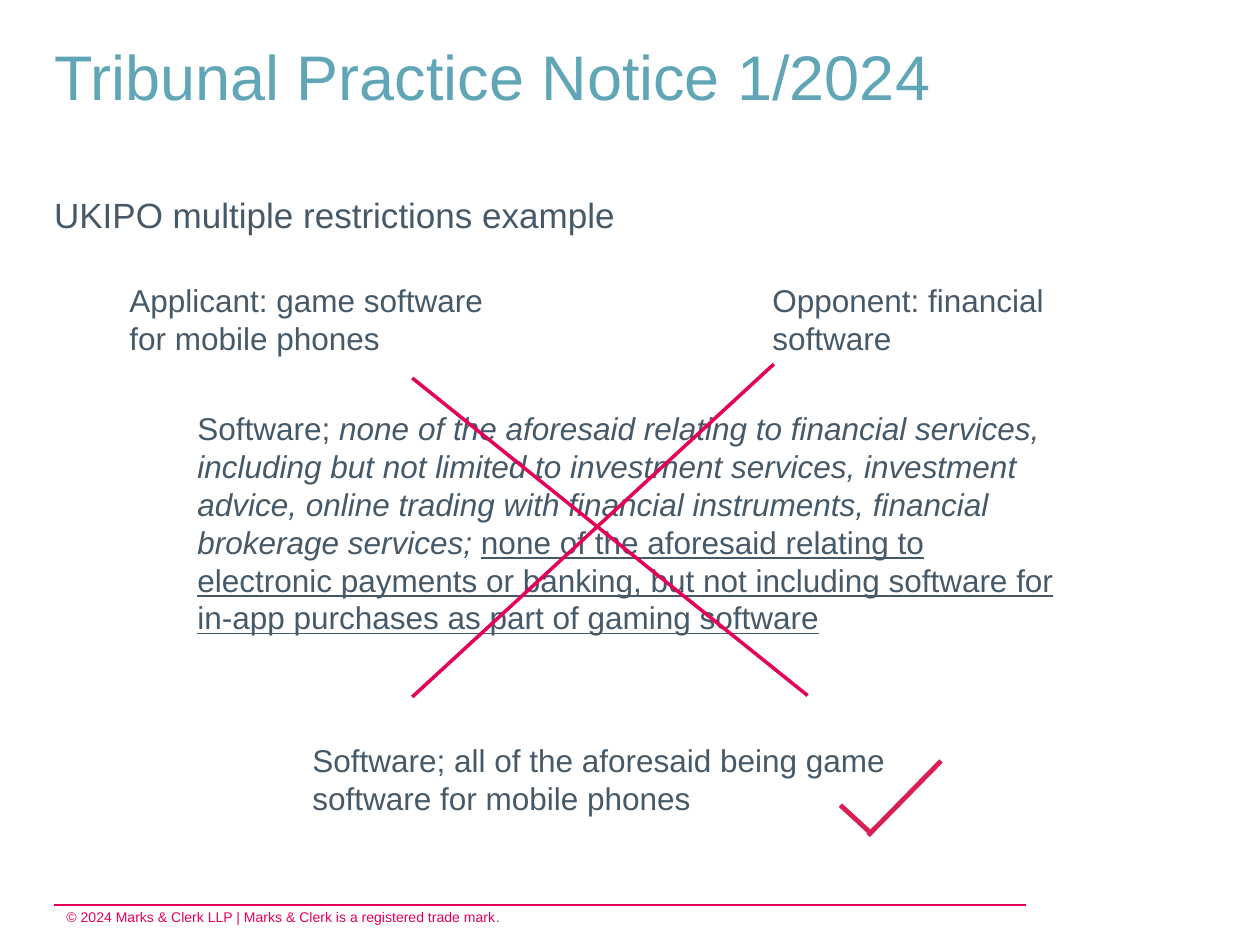
"""Build the Tribunal Practice Notice slide."""
from dataclasses import dataclass, field

from lxml.etree import SubElement
from pptx import Presentation
from pptx.dml.color import RGBColor as RGB
from pptx.enum.shapes import MSO_CONNECTOR as Conn
from pptx.enum.text import MSO_ANCHOR as Anchor, PP_ALIGN as Align
from pptx.oxml.ns import qn
from pptx.slide import Slide
from pptx.util import Cm, Pt

COLOURS = {"title": "61A6B6", "text": "465969", "brand": "E40058", "tick": "D91F53"}
MARGIN = 1.09
PAIR_TOP = 5.54


@dataclass
class Run:
    text: str
    colour: str = "text"
    fmt: dict = field(default_factory=dict)


@dataclass
class Block:
    left: float
    top: float
    width: float
    height: float
    runs: list[Run]
    size: int = 18
    padded: bool = True
    spacing: float = 1.0


@dataclass
class Line:
    x1: float
    y1: float
    x2: float
    y2: float
    weight: float
    colour: str = "brand"


BLOCKS = [
    Block(MARGIN, 18.19, 10.62, 0.61, [
        Run("© 2024 Marks & Clerk LLP | Marks & Clerk is a registered trade mark", "brand"),
        Run("."),
    ], size=8),
    Block(MARGIN, 3.99, 23.14, 13.11, [Run("UKIPO multiple restrictions example")],
          size=20, padded=False, spacing=0.9),
    Block(MARGIN, 0.94, 24.31, 1.68, [Run("Tribunal Practice Notice 1/2024", "title")],
          size=36, padded=False, spacing=0.9),
    Block(2.36, PAIR_TOP, 8.46, 1.8, [Run("Applicant: game software for mobile phones")]),
    Block(15.32, PAIR_TOP, 8.46, 1.8, [Run("Opponent: financial software")]),
    Block(3.73, 8.13, 17.88, 4.88, [
        Run("Software; "),
        Run("none of the aforesaid relating to financial services, including but not "
            "limited to investment services, investment advice, online trading with "
            "financial instruments, financial brokerage services; ", fmt={"italic": True}),
        Run("none of the aforesaid relating to electronic payments or banking, but not "
            "including software for in-app purchases as part of gaming software",
            fmt={"underline": True}),
    ]),
    Block(6.05, 14.81, 13.28, 1.8, [
        Run("Software; all of the aforesaid being game software for mobile phones"),
    ]),
]

LINES = [
    Line(MARGIN, 18.24, 20.68, 18.24, 1.15),
    Line(16.94, 16.23, 17.55, 16.79, 2.75, "tick"),
    Line(17.5, 16.84, 18.97, 15.34, 2.75, "tick"),
    Line(8.31, 7.62, 16.28, 14.02, 2),
    Line(15.6, 7.34, 8.31, 14.05, 2),
]


def add_block(s: Slide, block: Block) -> None:
    """Add a text box with its formatted runs."""
    box = (block.left, block.top, block.width, block.height)
    tf = s.shapes.add_textbox(*map(Cm, box)).text_frame
    frame = {"word_wrap": True, "vertical_anchor": Anchor.TOP}
    if not block.padded:
        sides = ("left", "right", "top", "bottom")
        frame |= {f"margin_{side}": Cm(0) for side in sides}
    for name, value in frame.items():
        setattr(tf, name, value)
    p = tf.paragraphs[0]
    p.alignment = Align.LEFT
    p.line_spacing = block.spacing
    for run in block.runs:
        r = p.add_run()
        r.text = run.text
        fmt = {"name": "Arial", "size": Pt(block.size)} | run.fmt
        for name, value in fmt.items():
            setattr(r.font, name, value)
        r.font.color.rgb = RGB.from_string(COLOURS[run.colour])


def add_line(s: Slide, line: Line) -> None:
    """Add a straight line without a shadow."""
    ends = (line.x1, line.y1, line.x2, line.y2)
    c = s.shapes.add_connector(Conn.STRAIGHT, *map(Cm, ends))
    c.line.width = Pt(line.weight)
    c.line.color.rgb = RGB.from_string(COLOURS[line.colour])
    SubElement(c._element.spPr, qn("a:effectLst"))


def main() -> None:
    """Create and save the presentation."""
    prs = Presentation()
    prs.slide_width, prs.slide_height = Cm(25.4), Cm(19.05)
    s = prs.slides.add_slide(prs.slide_layouts[6])
    for block in BLOCKS:
        add_block(s, block)
    for line in LINES:
        add_line(s, line)
    prs.save("out.pptx")


if __name__ == "__main__":
    main()
